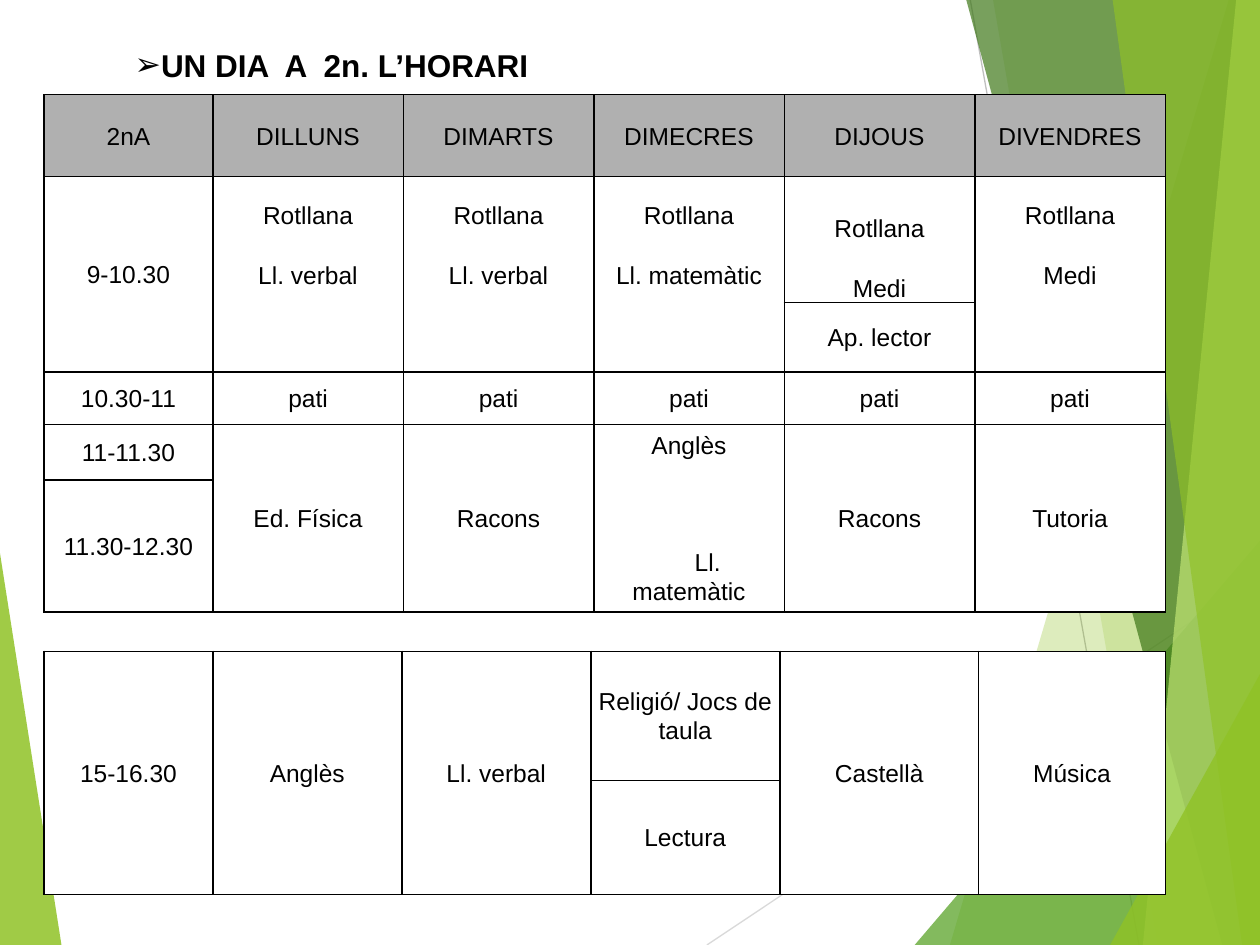
from lxml.etree import SubElement
from pptx import Presentation
from pptx.dml.color import RGBColor
from pptx.enum.shapes import MSO_CONNECTOR
from pptx.enum.text import MSO_ANCHOR, PP_ALIGN
from pptx.oxml.ns import qn
from pptx.util import Cm, Pt


def paint(fill, colour, opacity=100):
    """Fill with a hex colour; opacity is a percentage."""
    fill.solid()
    fill.fore_color.rgb = RGBColor.from_string(colour)
    if opacity < 100:
        tint = fill._xPr.find(qn("a:solidFill"))[0]
        SubElement(tint, qn("a:alpha"), val=str(opacity * 1000))


def add_timetable(top, widths, heights, texts, merges):
    """Add a bordered table; texts maps (row, column) to its wording."""
    frame = page.shapes.add_table(len(heights), len(widths), Cm(0.89), Cm(top),
                                  Cm(sum(widths)), Cm(sum(heights)))
    table = frame.table
    table.first_row = table.horz_banding = False
    for column, width in zip(table.columns, widths):
        column.width = Cm(width)
    for row, height in zip(table.rows, heights):
        row.height = Cm(height)
    for cell in table.iter_cells():
        for side in ("lnL", "lnR", "lnT", "lnB"):
            border = SubElement(cell._tc.get_or_add_tcPr(), qn(f"a:{side}"), w=str(Pt(1)))
            SubElement(SubElement(border, qn("a:solidFill")), qn("a:srgbClr"), val="000000")
        paint(cell.fill, "FFFFFF")
        cell.vertical_anchor = MSO_ANCHOR.MIDDLE
        cell.margin_left = cell.margin_right = Cm(0.12)
        cell.margin_top = cell.margin_bottom = 0
    for row, column in merges:
        table.cell(row, column).merge(table.cell(row + 1, column))
    for (row, column), wording in texts.items():
        cell = table.cell(row, column)
        cell.text_frame.text = wording
        for para in cell.text_frame.paragraphs:
            para.alignment = PP_ALIGN.CENTER
            para.line_spacing = 1.07
            for span in para.runs:
                span.font.name = "Arial"
                span.font.size = Pt(14)
                paint(span.font.fill, "000000")
    return table


deck = Presentation()
deck.slide_width, deck.slide_height = Cm(25.4), Cm(19.05)
page = deck.slides.add_slide(deck.slide_layouts[5])

# Background: translucent green facets and two thin lines
left_facet = ([(0, 11.15), (1.24, 19.05), (0, 19.05)], "90C226", 85)
right_facets = [
    ([(24.77, 0), (19.15, 19.05), (25.4, 19.05), (25.4, 0)], "90C226", 30),
    ([(20.02, 0), (23.34, 19.05), (25.4, 19.05), (25.4, 0)], "90C226", 20),
    ([(18.44, 19.05), (25.4, 10.9), (25.4, 19.05)], "54A021", 72),
    ([(19.48, 0), (24.64, 19.05), (25.4, 19.05), (25.4, 0)], "3F7819", 70),
    ([(24.92, 0), (23.04, 19.05), (25.4, 19.05), (25.4, 0)], "C0E474", 70),
    ([(22.43, 0), (25.04, 19.05), (25.4, 19.05), (25.4, 0)], "90C226", 65),
    ([(22.38, 19.05), (25.4, 13.59), (25.4, 19.05)], "90C226", 80),
]
thin_lines = [((14.25, 19.05), (25.4, 11.61), "D9D9D9"),
              ((19.56, 0), (22.96, 19.05), "BFBFBF")]

for start, end, colour in thin_lines:
    line = page.shapes.add_connector(MSO_CONNECTOR.STRAIGHT, *map(Cm, start + end))
    paint(line.line.fill, colour)
    line.line.width = Pt(0.75)
    SubElement(line._element.spPr, qn("a:effectLst"))

for corners, colour, opacity in [left_facet] + right_facets:
    points = [(Cm(x), Cm(y)) for x, y in corners]
    builder = page.shapes.build_freeform(*points[0])
    builder.add_line_segments(points[1:], close=True)
    facet = builder.convert_to_shape()
    facet.shadow.inherit = False
    facet.line.fill.background()
    paint(facet.fill, colour, opacity)

# Title
title = page.shapes.title
title.left, title.top, title.width, title.height = Cm(0.58), Cm(0.79), Cm(21.82), Cm(1.02)
title.text_frame.text = "UN DIA  A  2n. L’HORARI"
title.text_frame.vertical_anchor = MSO_ANCHOR.MIDDLE
para = title.text_frame.paragraphs[0]
para.alignment = PP_ALIGN.LEFT
properties = para._p.get_or_add_pPr()
properties.set("marL", str(Cm(2.39)))
properties.set("indent", str(-Cm(0.51)))
SubElement(properties, qn("a:buFont"), typeface="Arial")
SubElement(properties, qn("a:buChar"), char="➢")
font = para.runs[0].font
font.name, font.size, font.bold = "Arial", Pt(18), True
paint(font.fill, "000000")

# Morning
days = ["2nA", "DILLUNS", "DIMARTS", "DIMECRES", "DIJOUS", "DIVENDRES"]
first_lesson = ["9-10.30", "Rotllana\nLl. verbal", "Rotllana\nLl. verbal",
                "Rotllana\nLl. matemàtic", "Rotllana\nMedi", "Rotllana\nMedi"]
playground = ["10.30-11"] + ["pati"] * 5
last_lesson = ["11-11.30", "Ed. Física", "Racons", "Anglès\nLl. matemàtic", "Racons", "Tutoria"]
morning_texts = {(2, 4): "Ap. lector", (5, 0): "11.30-12.30"}
for row, wordings in ((0, days), (1, first_lesson), (3, playground), (4, last_lesson)):
    for column, wording in enumerate(wordings):
        morning_texts[row, column] = wording
morning = add_timetable(
    1.91, [3.4] + [3.84] * 5, [1.65, 2.54, 1.4, 1.06, 1.12, 2.66], morning_texts,
    [(1, column) for column in (0, 1, 2, 3, 5)] + [(4, column) for column in range(1, 6)])

for cell in morning.rows[0].cells:
    paint(cell.fill, "B0B0B0")
for column in range(1, 6):
    cell = morning.cell(1, column)
    cell.text_frame.paragraphs[1].space_before = Pt(17.4)
    cell.vertical_anchor = MSO_ANCHOR.TOP
    cell.margin_top = Cm(0.48)
thursday = morning.cell(1, 4)
thursday.vertical_anchor = MSO_ANCHOR.BOTTOM
thursday.margin_top = 0
maths = morning.cell(4, 3).text_frame.paragraphs[1]
maths.space_before = Pt(50)
maths._p.get_or_add_pPr().set("indent", str(Cm(0.75)))

# Afternoon
afternoon = ["15-16.30", "Anglès", "Ll. verbal", "Religió/ Jocs de taula", "Castellà", "Música"]
afternoon_texts = {(0, column): wording for column, wording in enumerate(afternoon)}
afternoon_texts[1, 3] = "Lectura"
add_timetable(13.13, [3.4, 3.81, 3.81, 3.81, 4.01, 3.76], [2.6, 2.3], afternoon_texts,
              [(0, column) for column in (0, 1, 2, 4, 5)])

deck.save("out.pptx")
